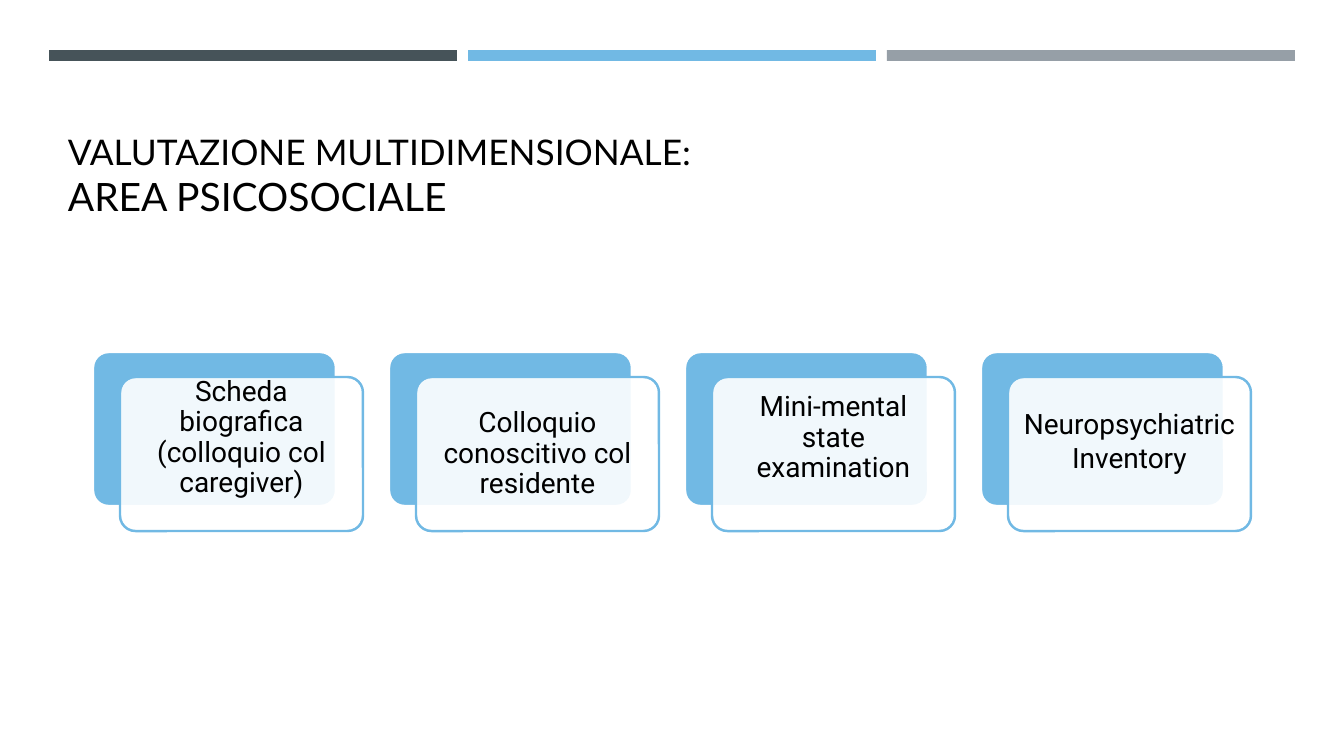
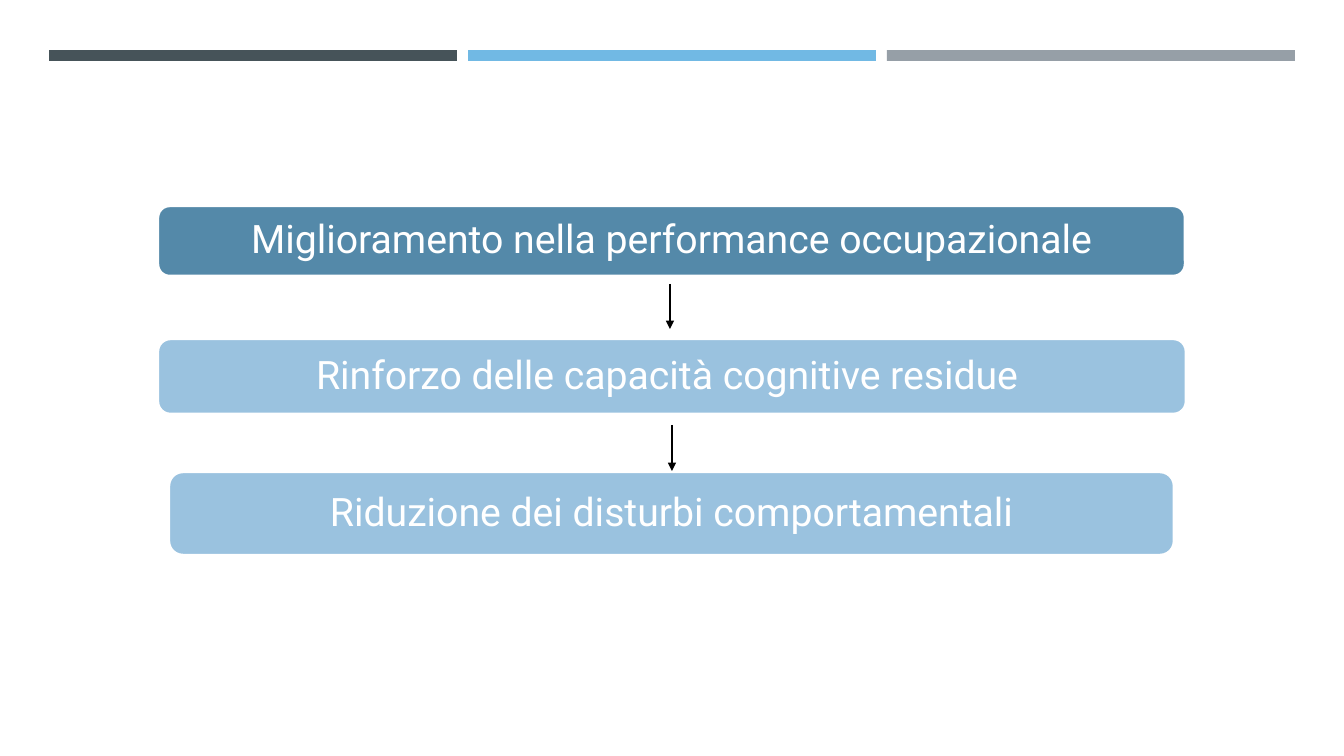
import pptx
import pptx.util
import pptx.dml.color
import pptx.enum.shapes
import pptx.enum.text
import pptx.oxml.ns
import lxml.etree

PX = 914400 / 100.8  # EMU in one px
COLORS = {
    "slate": "465359",
    "sky": "71B9E4",
    "gray": "969FA7",
    "steel": "5489A9",
    "pale": "9AC2DF",
    "white": "FFFFFF",
    "black": "000000",
}
RECT = pptx.enum.shapes.MSO_SHAPE.RECTANGLE
ROUNDED = pptx.enum.shapes.MSO_SHAPE.ROUNDED_RECTANGLE
MIDDLE = pptx.enum.text.MSO_ANCHOR.MIDDLE
CENTER = pptx.enum.text.PP_ALIGN.CENTER
qn = pptx.oxml.ns.qn


def px(*lengths):
    return [pptx.util.Emu(round(length * PX)) for length in lengths]


def add_box(page, kind, frame, fill, line=None, text="", size=20, color="black",
            side=10, bottom=0, spacing=0.9):
    box = page.shapes.add_shape(kind, *px(*frame))
    box.shadow.inherit = False
    box.fill.solid()
    box.fill.fore_color.rgb = pptx.dml.color.RGBColor.from_string(COLORS[fill])
    if line:
        box.line.color.rgb = pptx.dml.color.RGBColor.from_string(COLORS[line])
        box.line.width = pptx.util.Pt(1.75)
    else:
        box.line.fill.background()
    if text:
        words = box.text_frame
        words.word_wrap = True
        words.vertical_anchor = MIDDLE
        words.margin_left, words.margin_right, words.margin_top, words.margin_bottom = px(
            side, side, 0, bottom)
        para = words.paragraphs[0]
        para.text = text
        para.alignment = CENTER
        para.line_spacing = spacing
        para.font.name = "Roboto"
        para.font.size = pptx.util.Pt(size)
        para.font.color.rgb = pptx.dml.color.RGBColor.from_string(COLORS[color])
    return box


deck = pptx.Presentation()
deck.slide_width, deck.slide_height = px(1344, 756)

# Both slides carry the three bars at the top
pages = []
for _ in range(2):
    page = deck.slides.add_slide(deck.slide_layouts[6])
    for column, color in enumerate(["slate", "sky", "gray"]):
        add_box(page, RECT, (49 + 419 * column, 50, 408, 11), color)
    pages.append(page)
assessment, outcomes = pages

# Slide 1: title
title = assessment.shapes.add_textbox(*px(58, 121, 1115, 103)).text_frame
title.word_wrap = True
title.vertical_anchor = pptx.enum.text.MSO_ANCHOR.BOTTOM
para = title.paragraphs[0]
para.font.name = "Lato"
para.font.color.rgb = pptx.dml.color.RGBColor.from_string(COLORS["black"])
span = para.add_run()
span.text = "VALUTAZIONE MULTIDIMENSIONALE:"
span.font.size = pptx.util.Pt(25.2)
para.add_line_break()
span = para.add_run()
span.text = "AREA PSICOSOCIALE"
span.font.size = pptx.util.Pt(27.9)

# Slide 1: cards, each a blue back and a translucent front (text, bottom inset, spacing)
cards = [
    ("Scheda biografica (colloquio col caregiver)", 32, 0.9),
    ("Colloquio conoscitivo col residente", 0, 0.9),
    ("Mini-mental state examination", 32, 0.9),
    ("Neuropsychiatric Inventory", 28, 1.0),
]
for column, (text, bottom, spacing) in enumerate(cards):
    left = 93 + 296 * column
    back = add_box(assessment, ROUNDED, (left, 352, 243, 154), "sky", "white")
    front = add_box(assessment, ROUNDED, (left + 27, 377, 243, 154), "white", "sky",
                    text, bottom=bottom, spacing=spacing)
    for card in (back, front):
        card.adjustments[0] = 0.1
    tint = front._element.spPr.find(qn("a:solidFill")).find(qn("a:srgbClr"))
    lxml.etree.SubElement(tint, qn("a:alpha")).set("val", "90000")

# Slide 2: steps (text, fill, left, width, height)
steps = [
    ("Miglioramento nella performance occupazionale", "steel", 158, 1027, 70),
    ("Rinforzo delle capacità cognitive residue ", "pale", 158, 1028, 75),
    ("Riduzione dei disturbi comportamentali", "pale", 169, 1005, 83),
]
for row, (text, fill, left, width, height) in enumerate(steps):
    add_box(outcomes, ROUNDED, (left, 206 + 133 * row, width, height), fill, "white",
            text, size=28, color="white")

# Slide 2: arrows between the steps
for x, top, end in [(670, 284, 329), (672, 425, 471)]:
    arrow = outcomes.shapes.add_connector(
        pptx.enum.shapes.MSO_CONNECTOR.STRAIGHT, *px(x, top, x, end))
    arrow.line.color.rgb = pptx.dml.color.RGBColor.from_string(COLORS["black"])
    arrow.line.width = pptx.util.Pt(1)
    lxml.etree.SubElement(arrow.line._get_or_add_ln(), qn("a:tailEnd")).set("type", "triangle")
    lxml.etree.SubElement(arrow._element.spPr, qn("a:effectLst"))

deck.save("out.pptx")
